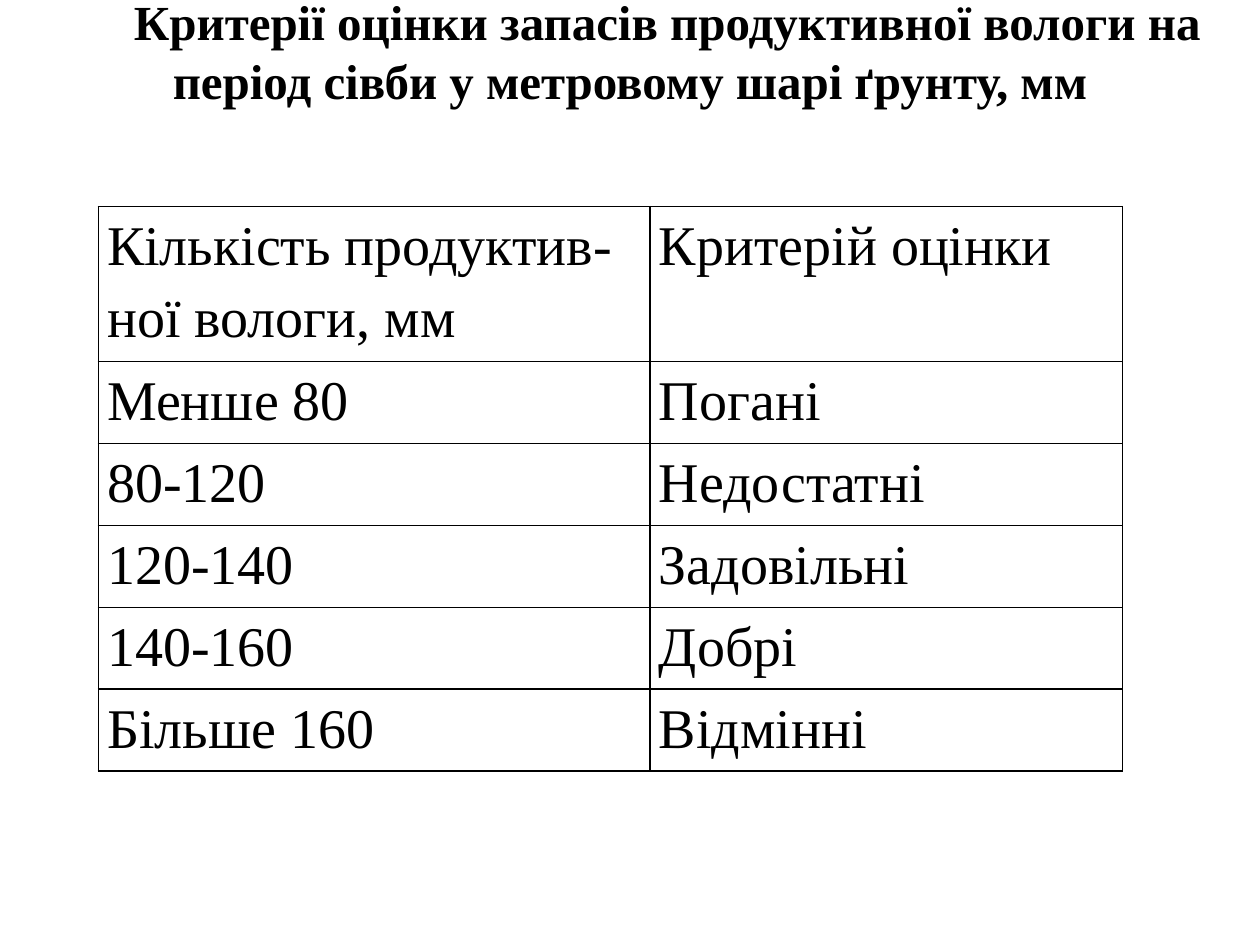
from lxml import etree
from pptx import Presentation
from pptx.dml.color import RGBColor
from pptx.enum.text import MSO_ANCHOR, MSO_AUTO_SIZE, PP_ALIGN
from pptx.oxml.ns import qn
from pptx.util import Inches, Pt

TOP = MSO_ANCHOR.TOP
NO_AUTOFIT = MSO_AUTO_SIZE.NONE
CENTER = PP_ALIGN.CENTER
FONT = "Times New Roman"
BLACK = "000000"
TITLE_ONLY = 5

TITLE = "Критерії оцінки запасів продуктивної вологи на період сівби у метровому шарі ґрунту, мм"
ROWS = [
    ("Кількість продуктив-ної вологи, мм", "Критерій оцінки"),
    ("Менше 80", "Погані"),
    ("80-120", "Недостатні"),
    ("120-140", "Задовільні"),
    ("140-160", "Добрі"),
    ("Більше 160", "Відмінні"),
]
COLUMN_WIDTHS = (4.38, 3.75)
HEADER_HEIGHT = 1.23
ROW_HEIGHT = 0.65


def color(value):
    return RGBColor.from_string(value)


def add_run(paragraph, text, size, bold=False):
    run = paragraph.add_run()
    run.text = text
    run.font.name = FONT
    run.font.size = Pt(size)
    run.font.bold = bold
    run.font.color.rgb = color(BLACK)


def set_title(slide, text):
    title = slide.shapes.title
    title.left, title.top = Inches(0), Inches(-0.17)
    title.width, title.height = Inches(10), Inches(1.35)
    frame = title.text_frame
    frame.word_wrap = True
    frame.auto_size = NO_AUTOFIT
    frame.vertical_anchor = TOP
    frame.margin_top = Inches(0.1)
    paragraph = frame.paragraphs[0]
    paragraph.alignment = CENTER
    paragraph._p.get_or_add_pPr().set("indent", str(Inches(0.59)))
    add_run(paragraph, text, 28, bold=True)


def set_borders(cell, width, value):
    properties = cell._tc.get_or_add_tcPr()
    for side in ("lnL", "lnR", "lnT", "lnB"):
        line = etree.SubElement(properties, qn(f"a:{side}"), w=str(Pt(width)))
        fill = etree.SubElement(line, qn("a:solidFill"))
        etree.SubElement(fill, qn("a:srgbClr"), val=value)


def fill_cell(cell, text):
    set_borders(cell, 1, BLACK)
    cell.fill.background()
    cell.margin_left = cell.margin_right = Inches(0.07)
    cell.margin_top = cell.margin_bottom = 0
    paragraph = cell.text_frame.paragraphs[0]
    paragraph.line_spacing = 1.15
    add_run(paragraph, text, 32)


def add_criteria_table(slide, left, top):
    heights = [HEADER_HEIGHT] + [ROW_HEIGHT] * (len(ROWS) - 1)
    table = slide.shapes.add_table(
        len(ROWS), len(COLUMN_WIDTHS), Inches(left), Inches(top),
        Inches(sum(COLUMN_WIDTHS)), Inches(sum(heights)),
    ).table
    table.first_row = False
    table.horz_banding = False
    for column, width in zip(table.columns, COLUMN_WIDTHS):
        column.width = Inches(width)
    for row, height, texts in zip(table.rows, heights, ROWS):
        row.height = Inches(height)
        for cell, text in zip(row.cells, texts):
            fill_cell(cell, text)


def main():
    presentation = Presentation()
    presentation.slide_width = Inches(10)
    presentation.slide_height = Inches(7.5)
    slide = presentation.slides.add_slide(presentation.slide_layouts[TITLE_ONLY])
    set_title(slide, TITLE)
    add_criteria_table(slide, 0.78, 1.64)
    presentation.save("out.pptx")


if __name__ == "__main__":
    main()
